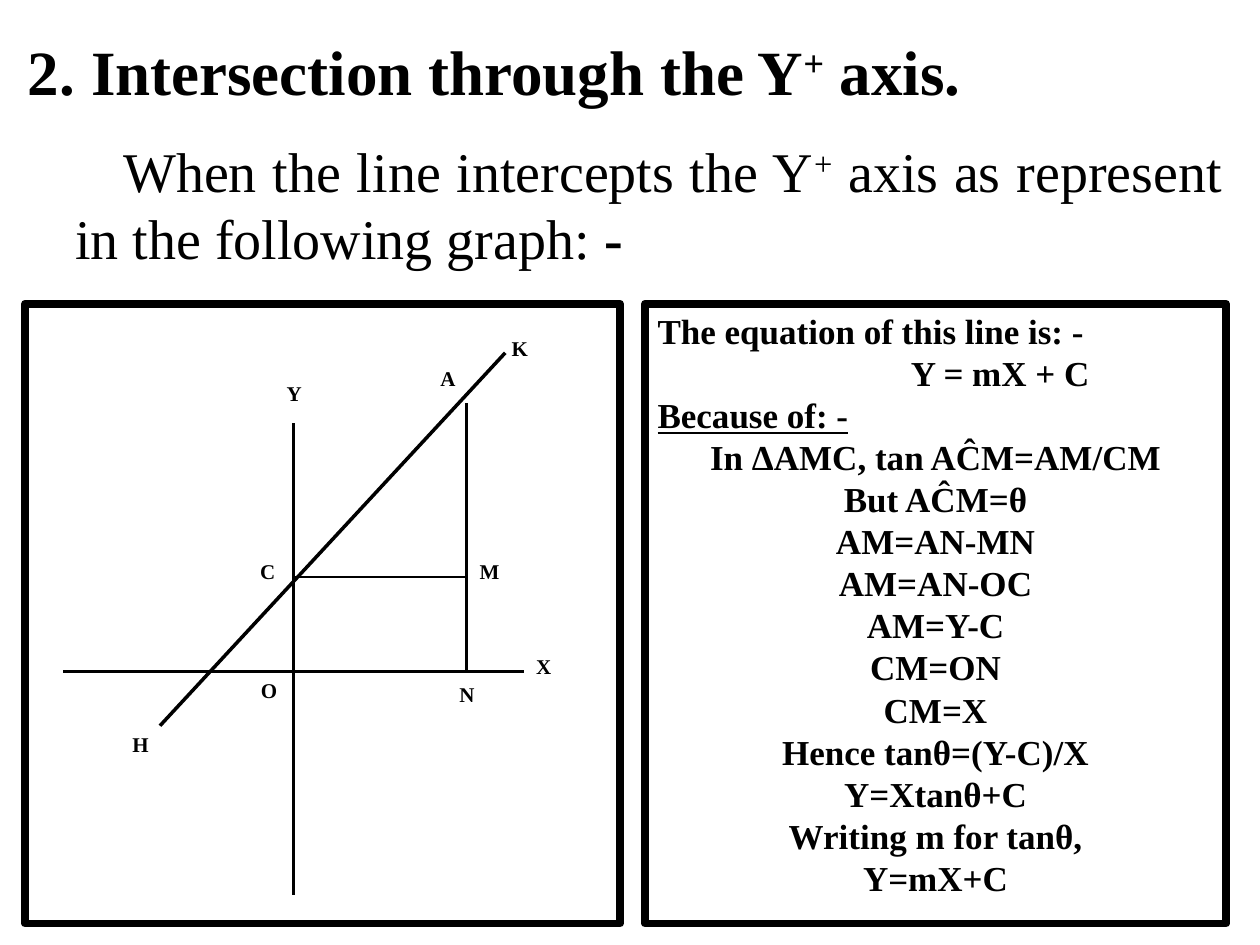
from dataclasses import dataclass

from lxml import etree
from pptx import Presentation
from pptx.dml.color import RGBColor
from pptx.enum import shapes, text
from pptx.oxml.ns import qn
from pptx.util import Inches, Pt


@dataclass(frozen=True)
class Theme:
    font: str = "Times New Roman"
    ink: RGBColor = RGBColor(0, 0, 0)
    paper: RGBColor = RGBColor(255, 255, 255)
    title: int = 36
    body: int = 32
    proof: int = 20
    label: int = 12
    frame: float = 4.5
    axis: float = 2
    guide: float = 1.5


THEME = Theme()
ALIGN = text.PP_ALIGN

PANEL_TOP, PANEL_HEIGHT = 2.41, 4.92
ORIGIN_X, ORIGIN_Y = 2.33, 5.33
POINT_X, INTERCEPT_Y = 3.7, 4.58
LABEL_SIZE = 0.61, 0.59

LINES = [
    (ORIGIN_X, 3.36, ORIGIN_X, 7.1, THEME.axis),
    (0.5, ORIGIN_Y, 4.16, ORIGIN_Y, THEME.axis),
    (4.01, 2.8, 1.27, 5.76, THEME.axis),
    (POINT_X, 3.2, POINT_X, ORIGIN_Y, THEME.guide),
    (POINT_X, INTERCEPT_Y, ORIGIN_X, INTERCEPT_Y, THEME.guide),
]
LABELS = [
    ("Y", 2.03, 2.97), ("X", 4.01, 5.14), ("K", 3.82, 2.61),
    ("H", 0.81, 5.76), ("O", 1.83, 5.33), ("A", 3.25, 2.85),
    ("M", 3.58, 4.38), ("N", 3.4, 5.36), ("C", 1.82, 4.38),
]
EQUATION = "Y = mX + C"
REASON = "Because of: -"
OPENING = ["The equation of this line is: -", EQUATION, REASON]
STEPS = [
    "In ΔAMC, tan AĈM=AM/CM", "But AĈM=θ", "AM=AN-MN", "AM=AN-OC",
    "AM=Y-C", "CM=ON", "CM=X", "Hence tanθ=(Y-C)/X", "Y=Xtanθ+C",
    "Writing m for tanθ,", "Y=mX+C",
]


def style(font, size, bold=True):
    font.name = THEME.font
    font.size = Pt(size)
    font.bold = bold
    font.color.rgb = THEME.ink


def indent(para, left, first=0):
    props = para._p.get_or_add_pPr()
    props.set("marL", str(Inches(left)))
    props.set("indent", str(Inches(first)))


def number(para, start):
    props = para._p.get_or_add_pPr()
    etree.SubElement(props, qn("a:buFont"), typeface="+mj-lt")
    etree.SubElement(props, qn("a:buAutoNum"), type="arabicPeriod", startAt=str(start))


def add_spans(para, size, spans):
    """Fill a paragraph from (wording, bold, superscript) spans."""
    for wording, bold, raised in spans:
        span = para.add_run()
        span.text = wording
        style(span.font, size, bold)
        if raised:
            span._r.get_or_add_rPr().set("baseline", "30000")


def add_text_box(parent, left, top, width, height):
    box = parent.add_textbox(Inches(left), Inches(top), Inches(width), Inches(height))
    box.text_frame.word_wrap = True
    return box.text_frame


def add_heading(slide):
    frame = add_text_box(slide.shapes, 0.12, 0.21, 9.68, 2.03)
    title = frame.paragraphs[0]
    title.alignment = ALIGN.JUSTIFY
    indent(title, 0.38, -0.38)
    number(title, 2)
    add_spans(title, THEME.title, [
        (" Intersection through the Y", True, False),
        ("+", True, True),
        (" axis.", True, False),
    ])
    intro = frame.add_paragraph()
    intro.alignment = ALIGN.JUSTIFY
    intro.space_before = Pt(16)
    indent(intro, 0.38, 0.38)
    add_spans(intro, THEME.body, [
        ("When the line intercepts the Y", False, False),
        ("+", False, True),
        (" axis as represent in the following graph:", False, False),
        (" -", True, False),
    ])


def add_panel(parent, left, width):
    panel = parent.add_shape(shapes.MSO_SHAPE.RECTANGLE, Inches(left), Inches(PANEL_TOP),
                             Inches(width), Inches(PANEL_HEIGHT))
    panel.shadow.inherit = False
    panel.fill.solid()
    panel.fill.fore_color.rgb = THEME.paper
    panel.line.color.rgb = THEME.ink
    panel.line.width = Pt(THEME.frame)
    return panel


def add_line(parent, x1, y1, x2, y2, weight):
    line = parent.add_connector(shapes.MSO_CONNECTOR.STRAIGHT,
                                Inches(x1), Inches(y1), Inches(x2), Inches(y2))
    line.line.color.rgb = THEME.ink
    line.line.width = Pt(weight)
    etree.SubElement(line._element.spPr, qn("a:effectLst"))


def add_label(parent, letter, left, top):
    para = add_text_box(parent, left, top, *LABEL_SIZE).paragraphs[0]
    para.text = letter
    para.alignment = ALIGN.CENTER
    style(para.runs[0].font, THEME.label)


def add_graph(slide):
    graph = slide.shapes.add_group_shape().shapes
    add_panel(graph, 0.2, 4.72)
    for line in LINES:
        add_line(graph, *line)
    for label in LABELS:
        add_label(graph, *label)


def add_proof(slide):
    frame = add_panel(slide.shapes, 5.12, 4.61).text_frame
    frame.word_wrap = True
    frame.vertical_anchor = text.MSO_ANCHOR.TOP
    frame.text = "\n".join(OPENING + STEPS)
    for row, para in enumerate(frame.paragraphs):
        para.alignment = ALIGN.LEFT if row < len(OPENING) else ALIGN.CENTER
        font = para.runs[0].font
        style(font, THEME.proof)
        if para.text == EQUATION:
            indent(para, 2.01)
        elif para.text == REASON:
            font.underline = True


def main():
    deck = Presentation()
    deck.slide_width, deck.slide_height = Inches(10), Inches(7.5)
    slide = deck.slides.add_slide(deck.slide_layouts[6])
    add_heading(slide)
    add_graph(slide)
    add_proof(slide)
    deck.save("out.pptx")


if __name__ == "__main__":
    main()
